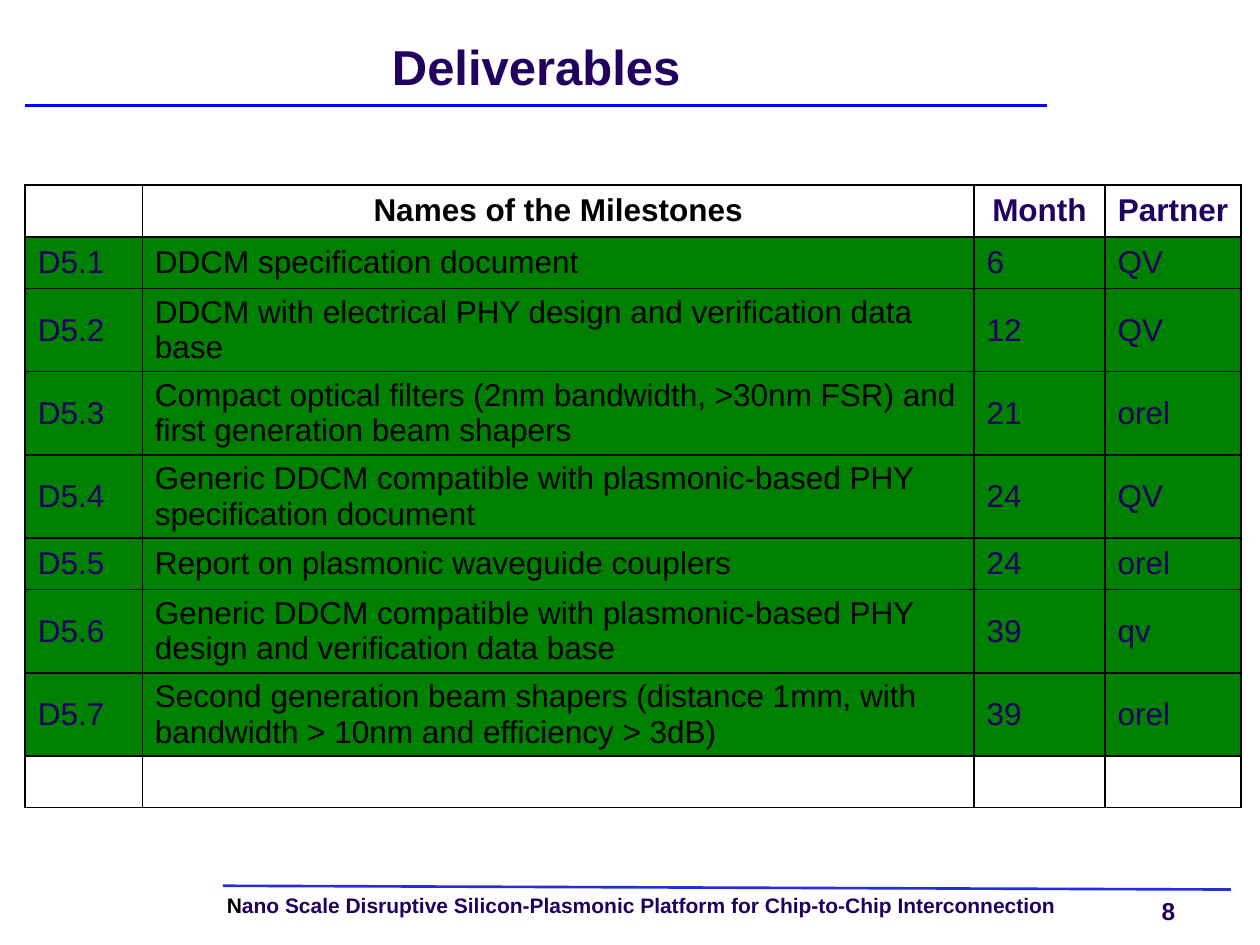
from lxml import etree
from pptx import Presentation
from pptx.dml.color import RGBColor
from pptx.enum.shapes import MSO_CONNECTOR
from pptx.enum.text import MSO_ANCHOR, MSO_AUTO_SIZE, PP_ALIGN
from pptx.oxml.ns import qn
from pptx.util import Inches, Pt

STRAIGHT = MSO_CONNECTOR.STRAIGHT
MIDDLE, TOP = MSO_ANCHOR.MIDDLE, MSO_ANCHOR.TOP
NO_AUTOFIT = MSO_AUTO_SIZE.NONE
LEFT, CENTER = PP_ALIGN.LEFT, PP_ALIGN.CENTER

BLACK = RGBColor(0x00, 0x00, 0x00)
PURPLE = RGBColor(0x22, 0x00, 0x60)
GREEN = RGBColor(0x00, 0x80, 0x00)
TITLE_BLUE = RGBColor(0x00, 0x00, 0xFF)
FOOTER_BLUE = RGBColor(0x26, 0x2F, 0xDA)
FONT = "Arial"

HEADER = ("", "Names of the Milestones", "Month", "Partner")
DELIVERABLES = [
    ("D5.1", "DDCM specification document", "6", "QV"),
    ("D5.2", "DDCM with electrical PHY design and verification data base", "12", "QV"),
    ("D5.3", "Compact optical filters (2nm bandwidth, >30nm FSR) and "
             "first generation beam shapers", "21", "orel"),
    ("D5.4", "Generic DDCM compatible with plasmonic-based PHY "
             "specification document", "24", "QV"),
    ("D5.5", "Report on plasmonic waveguide couplers", "24", "orel"),
    ("D5.6", "Generic DDCM compatible with plasmonic-based PHY "
             "design and verification data base", "39", "qv"),
    ("D5.7", "Second generation beam shapers (distance 1mm, with "
             "bandwidth > 10nm and efficiency > 3dB)", "39", "orel"),
]
BLANK_ROW = ("",) * len(HEADER)
COLUMN_WIDTHS = (0.93, 6.6, 1.04, 1.08)
ROW_HEIGHT = 0.41


def write(p, text, size=18, color=PURPLE, bold=False, align=LEFT, spacing=None):
    p.alignment = align
    if spacing is not None:
        p.line_spacing = spacing
    r = p.add_run()
    r.text = text
    r.font.name = FONT
    r.font.size = Pt(size)
    r.font.bold = bold
    r.font.color.rgb = color


def place(sp, left, top, width, height):
    sp.left, sp.top = Inches(left), Inches(top)
    sp.width, sp.height = Inches(width), Inches(height)


def set_frame(tf, anchor=TOP, wrap=True):
    tf.margin_left = tf.margin_right = tf.margin_top = tf.margin_bottom = 0
    tf.vertical_anchor = anchor
    tf.word_wrap = wrap
    tf.auto_size = NO_AUTOFIT
    return tf.paragraphs[0]


def add_rule(s, x1, y1, x2, y2, color):
    rule = s.shapes.add_connector(STRAIGHT, Inches(x1), Inches(y1), Inches(x2), Inches(y2))
    rule.line.color.rgb = color
    rule.line.width = Pt(1.5)
    etree.SubElement(rule._element.spPr, qn("a:effectLst"))


def add_title(s, left, top, width, height):
    title = s.shapes.title
    place(title, left, top, width, height)
    p = set_frame(title.text_frame, anchor=MIDDLE)
    write(p, "Deliverables", size=28, bold=True, align=CENTER, spacing=Pt(32))
    add_rule(s, left, top + 0.64, left + width, top + 0.64, TITLE_BLUE)


def add_borders(cell):
    tc_pr = cell._tc.get_or_add_tcPr()
    for side in ("a:lnL", "a:lnR", "a:lnT", "a:lnB"):
        ln = etree.SubElement(tc_pr, qn(side), w=str(Pt(1)))
        fill = etree.SubElement(ln, qn("a:solidFill"))
        etree.SubElement(fill, qn("a:srgbClr"), val=str(BLACK))


def add_deliverables_table(s, left, top):
    rows = [HEADER, *DELIVERABLES, BLANK_ROW]
    table = s.shapes.add_table(
        len(rows), len(HEADER), Inches(left), Inches(top),
        Inches(sum(COLUMN_WIDTHS)), Inches(ROW_HEIGHT * len(rows))).table
    table.first_row = table.horz_banding = False
    for column, width in zip(table.columns, COLUMN_WIDTHS):
        column.width = Inches(width)
    for i, row in enumerate(rows):
        table.rows[i].height = Inches(ROW_HEIGHT)
        for j, text in enumerate(row):
            cell = table.cell(i, j)
            cell.vertical_anchor = MIDDLE
            add_borders(cell)
            if row in DELIVERABLES:
                cell.fill.solid()
                cell.fill.fore_color.rgb = GREEN
            else:
                cell.fill.background()
            if text:
                write(cell.text_frame.paragraphs[0], text,
                      color=BLACK if j == 1 else PURPLE, bold=row is HEADER,
                      align=CENTER if row is HEADER else LEFT)


def add_footer(s, left, top, width):
    add_rule(s, left - 0.03, top - 0.08, left + 7.97, top - 0.05, FOOTER_BLUE)
    project = s.shapes.add_textbox(Inches(left), Inches(top), Inches(width), Inches(0.18))
    p = set_frame(project.text_frame)
    write(p, "N", size=12, color=BLACK, bold=True, spacing=0.9)
    write(p, "ano Scale Disruptive Silicon-Plasmonic Platform for Chip-to-Chip "
             "Interconnection", size=12, bold=True, spacing=0.9)
    number = s.shapes.add_textbox(Inches(left + 7.42), Inches(top), Inches(0.4), Inches(0.23))
    write(set_frame(number.text_frame, wrap=False), "8", size=14, bold=True)


def main():
    prs = Presentation()
    prs.slide_width, prs.slide_height = Inches(10), Inches(7.5)
    s = prs.slides.add_slide(prs.slide_layouts[5])
    add_footer(s, 1.8, 7.11, 7.14)
    add_title(s, 0.2, 0.2, 8.11, 0.67)
    add_deliverables_table(s, 0.2, 1.47)
    prs.save("out.pptx")


if __name__ == "__main__":
    main()
